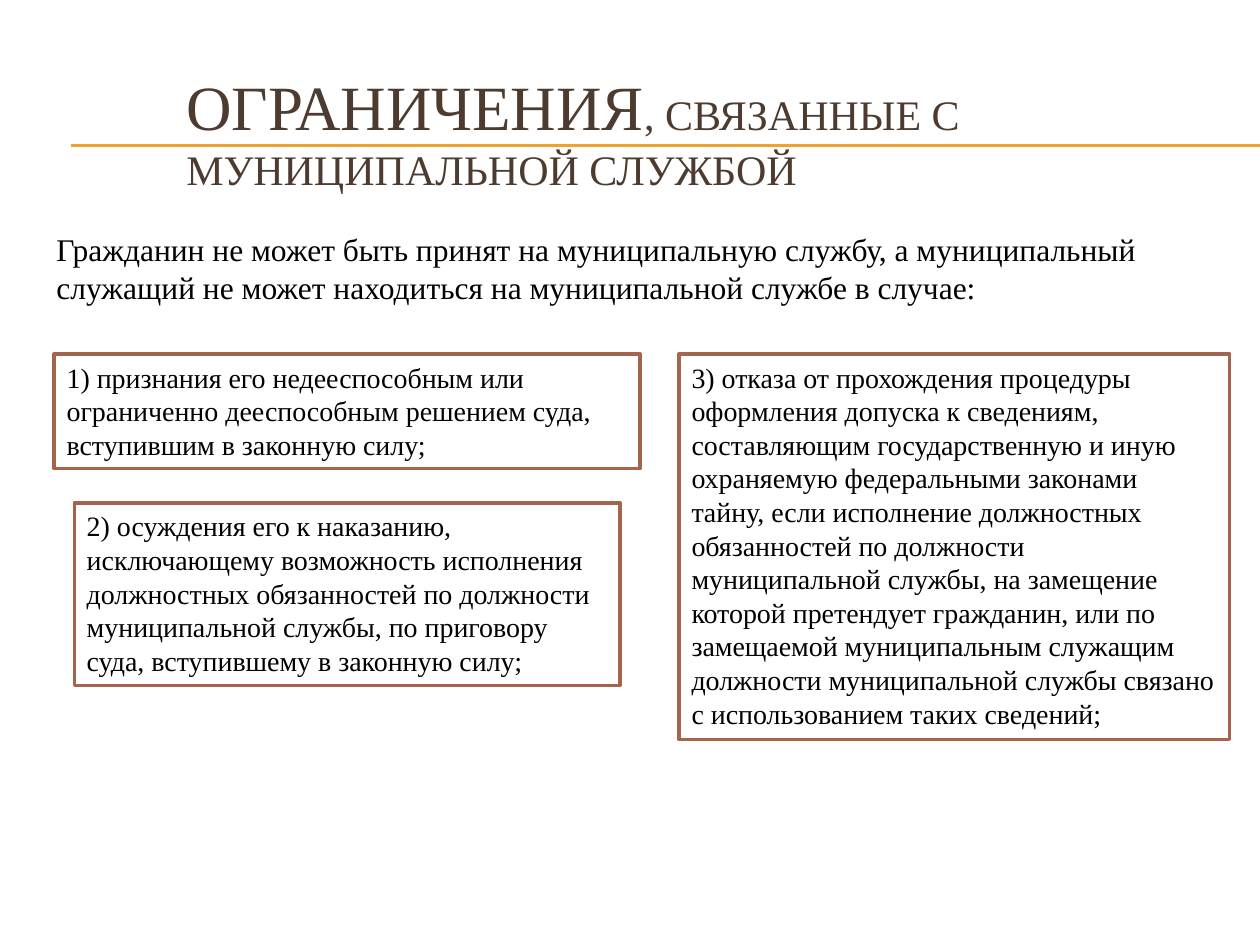
from lxml import etree
from pptx import Presentation
from pptx.dml.color import RGBColor
from pptx.enum.shapes import MSO_CONNECTOR as Connector, MSO_SHAPE as Shape
from pptx.enum.text import MSO_ANCHOR as Anchor, MSO_AUTO_SIZE as AutoSize, PP_ALIGN as Align
from pptx.oxml.ns import qn
from pptx.util import Inches, Pt

FONT = "Times New Roman"
BLACK, WHITE = "000000", "FFFFFF"
BROWN, ORANGE, RUST = "4E3B30", "F0A22E", "A5644E"

TITLE = [("ОГРАНИЧЕНИЯ", 36), (", СВЯЗАННЫЕ С МУНИЦИПАЛЬНОЙ СЛУЖБОЙ", 24)]
INTRO = ("Гражданин не может быть принят на муниципальную службу, а муниципальный "
         "служащий не может находиться на муниципальной службе в случае:")
RESTRICTIONS = [
    ((0.43, 2.81, 4.65, 0.91),
     "1) признания его недееспособным или ограниченно дееспособным решением суда, "
     "вступившим в законную силу;"),
    ((0.59, 3.99, 4.33, 1.45),
     "2) осуждения его к наказанию, исключающему возможность исполнения должностных "
     "обязанностей по должности муниципальной службы, по приговору суда, вступившему "
     "в законную силу;"),
    ((5.39, 2.81, 4.37, 3.06),
     "3) отказа от прохождения процедуры оформления допуска к сведениям, составляющим "
     "государственную и иную охраняемую федеральными законами тайну, если исполнение "
     "должностных обязанностей по должности муниципальной службы, на замещение которой "
     "претендует гражданин, или по замещаемой муниципальным служащим должности "
     "муниципальной службы связано с использованием таких сведений;"),
]


def color(value):
    return RGBColor.from_string(value)


def write_text(shape, runs, text_color, anchor=Anchor.TOP, auto_size=AutoSize.SHAPE_TO_FIT_TEXT):
    frame = shape.text_frame
    frame.word_wrap = True
    frame.auto_size = auto_size
    frame.vertical_anchor = anchor
    paragraph = frame.paragraphs[0]
    paragraph.alignment = Align.LEFT
    for text, size in runs:
        run = paragraph.add_run()
        run.text = text
        run.font.name = FONT
        run.font.size = Pt(size)
        run.font.color.rgb = color(text_color)


def add_text(slide, box, runs, text_color, **options):
    shape = slide.shapes.add_textbox(*map(Inches, box))
    write_text(shape, runs, text_color, **options)
    return shape


def add_framed_text(slide, box, text):
    shape = slide.shapes.add_shape(Shape.RECTANGLE, *map(Inches, box))
    shape.shadow.inherit = False
    shape.fill.solid()
    shape.fill.fore_color.rgb = color(WHITE)
    shape.line.color.rgb = color(RUST)
    shape.line.width = Pt(2)
    write_text(shape, [(text, 16)], BLACK)


def add_rule(slide, left, right, y):
    line = slide.shapes.add_connector(
        Connector.STRAIGHT, Inches(left), Inches(y), Inches(right), Inches(y))
    line.line.color.rgb = color(ORANGE)
    line.line.width = Pt(0.75)
    etree.SubElement(line._element.spPr, qn("a:effectLst"))


def main():
    presentation = Presentation()
    presentation.slide_width, presentation.slide_height = Inches(10), Inches(7.5)
    slide = presentation.slides.add_slide(presentation.slide_layouts[6])

    # Double rule behind the title
    for y in (1.15, 1.16):
        add_rule(slide, 0.56, 10, y)

    # Title, set slightly below the middle of its box
    title = add_text(slide, (1.38, 0.36, 7.12, 1.26), TITLE, BROWN,
                     anchor=Anchor.MIDDLE, auto_size=AutoSize.NONE)
    title.text_frame.margin_top = Inches(0.1)
    title.text_frame.margin_bottom = Inches(0)

    # Introduction
    add_text(slide, (0.35, 1.78, 9.13, 0.71), [(INTRO, 18)], BLACK)

    # Restrictions
    for box, text in RESTRICTIONS:
        add_framed_text(slide, box, text)

    presentation.save("out.pptx")


if __name__ == "__main__":
    main()
